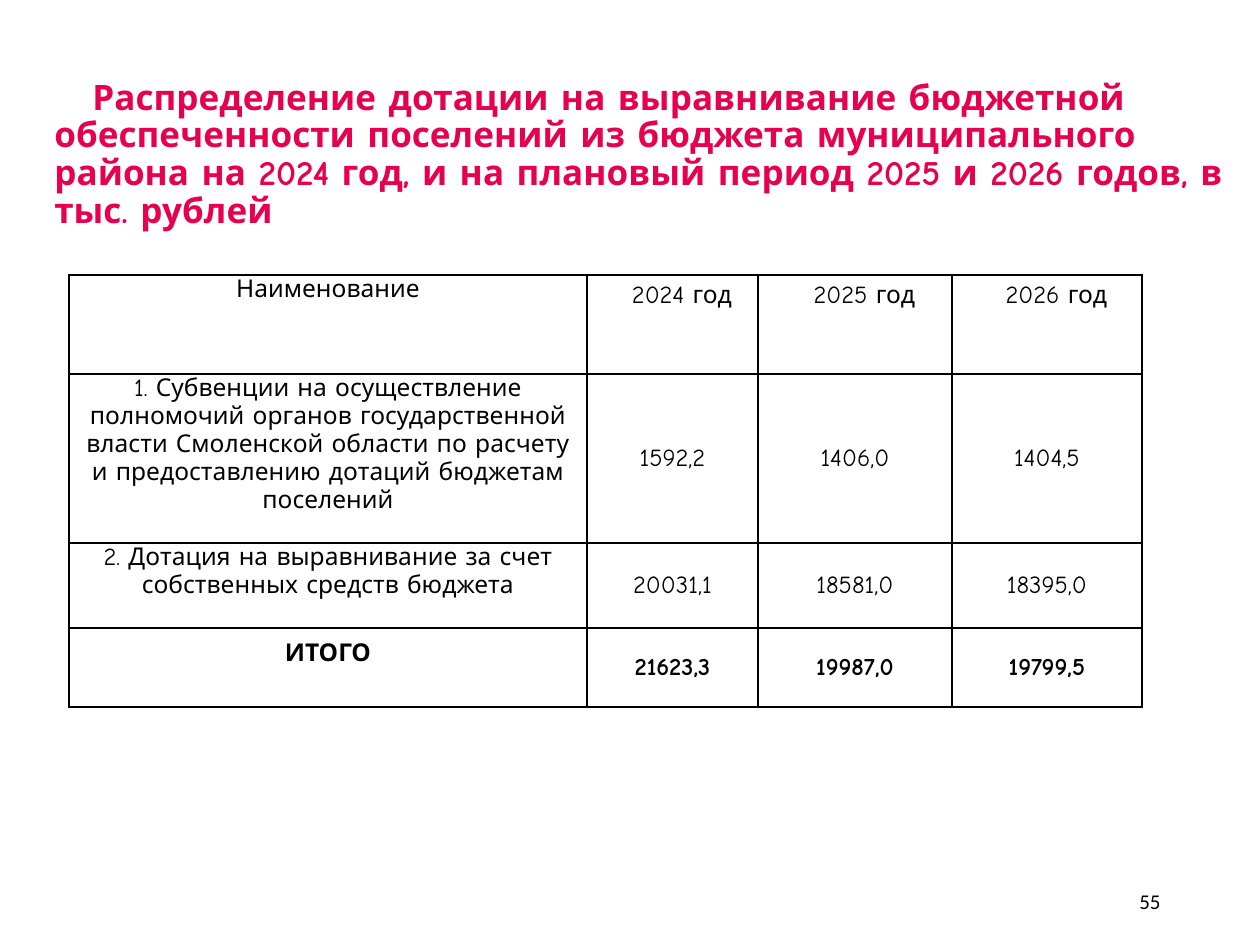
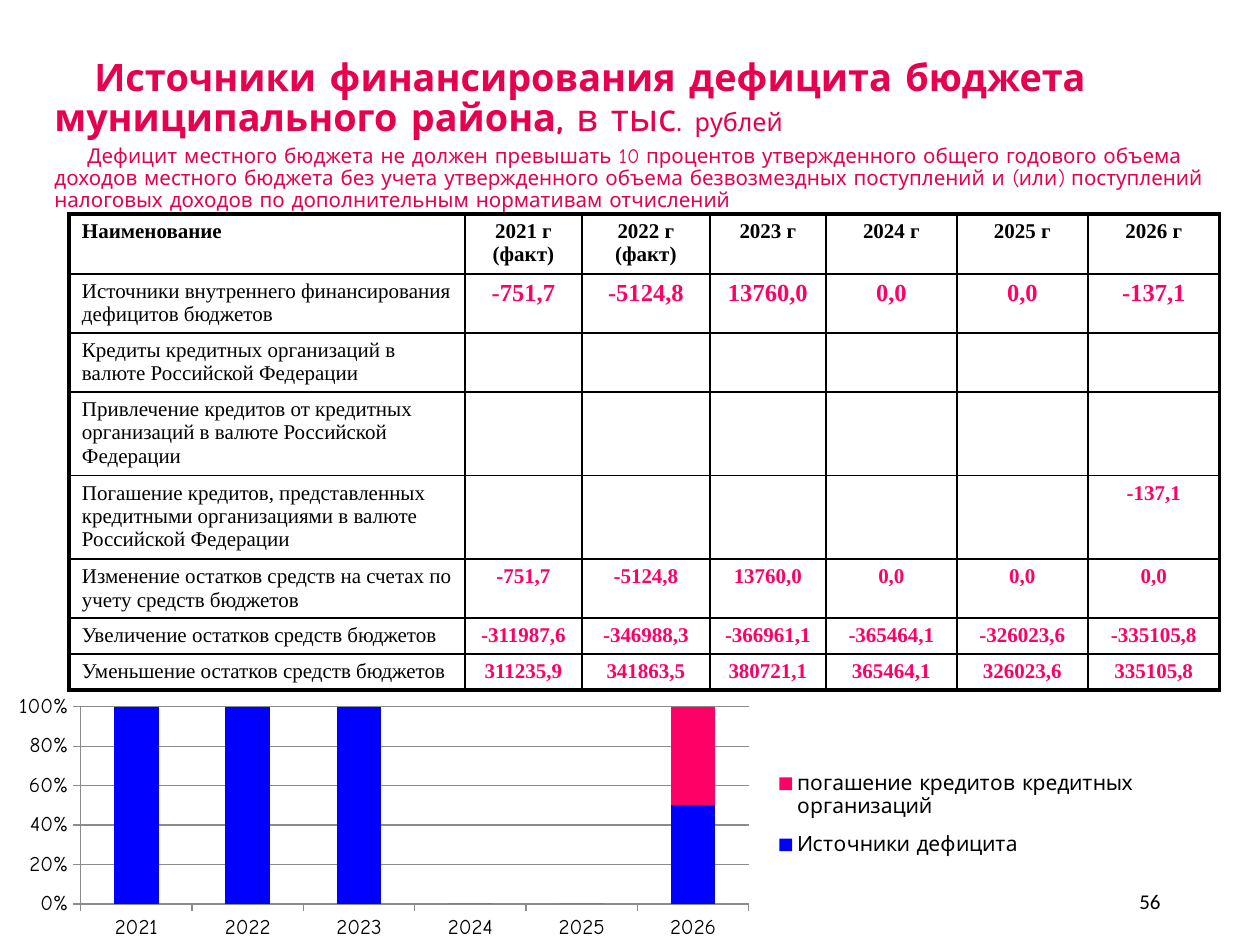
from lxml import etree
from pptx import Presentation
from pptx.chart.data import CategoryChartData
from pptx.dml.color import RGBColor
from pptx.enum.chart import XL_CHART_TYPE, XL_LEGEND_POSITION, XL_TICK_MARK
from pptx.enum.text import MSO_ANCHOR, PP_ALIGN
from pptx.oxml.ns import qn
from pptx.util import Emu, Pt


class Theme:
    title, accent, blue, ink, grid = "E6004D", "FF0066", "0000FF", "000000", "8B8B8B"
    comic, plain, serif = "Comic Neue", "Calibri", "Times New Roman"
    thin, thick = 1, 2.25


# Content: title paragraphs are (first-line indent, [(text, size, bold)])
GRANTS_TITLE = [(38, [(
    "Распределение дотации на выравнивание бюджетной обеспеченности поселений "
    "из бюджета муниципального района на 2024 год, и на плановый период "
    "2025 и 2026 годов, в тыс. рублей", 20, True)])]

GRANTS = [
    ("Наименование", "2024 год", "2025 год", "2026 год"),
    ("1. Субвенции на осуществление полномочий органов государственной власти "
     "Смоленской области по расчету и предоставлению дотаций бюджетам поселений",
     "1592,2", "1406,0", "1404,5"),
    ("2. Дотация на выравнивание за счет собственных средств бюджета",
     "20031,1", "18581,0", "18395,0"),
    ("ИТОГО", "21623,3", "19987,0", "19799,5"),
]
GRANT_COLS = [518, 171, 194, 190]
GRANT_ROWS = [99, 169, 85, 79]

DEFICIT_TITLE = [
    (40, [("Источники финансирования дефицита бюджета\vмуниципального района,", 21.6, True),
          (" в тыс. ", 21.6, False), ("рублей", 14.4, False)]),
    (33, [("Дефицит местного бюджета не должен превышать 10 процентов утвержденного "
           "общего годового объема доходов местного бюджета без учета утвержденного "
           "объема безвозмездных поступлений и (или) поступлений налоговых доходов "
           "по дополнительным нормативам отчислений", 11.7, False)]),
]

NO_VALUES = ("",) * 6
DEFICIT = [
    ("Наименование", "2021 г (факт)", "2022 г (факт)", "2023 г", "2024 г", "2025 г", "2026 г"),
    ("Источники внутреннего финансирования дефицитов бюджетов",
     "-751,7", "-5124,8", "13760,0", "0,0", "0,0", "-137,1"),
    ("Кредиты кредитных организаций в валюте Российской Федерации", *NO_VALUES),
    ("Привлечение кредитов от кредитных организаций в валюте Российской Федерации", *NO_VALUES),
    ("Погашение кредитов, представленных кредитными организациями в валюте "
     "Российской Федерации", *NO_VALUES[1:], "-137,1"),
    ("Изменение остатков средств на счетах по учету средств бюджетов",
     "-751,7", "-5124,8", "13760,0", "0,0", "0,0", "0,0"),
    ("Увеличение остатков средств бюджетов",
     "-311987,6", "-346988,3", "-366961,1", "-365464,1", "-326023,6", "-335105,8"),
    ("Уменьшение остатков средств бюджетов",
     "311235,9", "341863,5", "380721,1", "365464,1", "326023,6", "335105,8"),
]
DEFICIT_COLS = [396, 117, 128, 116, 131, 131, 132]
DEFICIT_ROWS = [60, 59, 59, 83, 83, 59, 36, 36]

YEARS = ["2021", "2022", "2023", "2024", "2025", "2026"]
SERIES = [
    ("Источники дефицита", [-100, -100, 100, 0, 0, -50], Theme.blue),
    ("погашение кредитов кредитных организаций", [None] * 5 + [-50], Theme.accent),
]


# Helpers
def px(n):
    return Emu(round(n * 914400 / 126))


def style_font(font, name, size, color=Theme.ink, bold=False):
    font.name, font.size, font.bold = name, Pt(size), bold
    font.color.rgb = RGBColor.from_string(color)


def add_run(p, text, *style):
    for i, line in enumerate(text.split("\v")):
        if i:
            p.add_line_break()
        r = p.add_run()
        r.text = line
        style_font(r.font, *style)


def add_box(s, *box):
    tf = s.shapes.add_textbox(*map(px, box)).text_frame
    tf.word_wrap = True
    tf.vertical_anchor = MSO_ANCHOR.MIDDLE
    return tf


def add_page(prs, number, title, top, height):
    s = prs.slides.add_slide(prs.slide_layouts[6])
    tf = add_box(s, 42, top, 1197, height)
    for i, (indent, runs) in enumerate(title):
        p = tf.add_paragraph() if i else tf.paragraphs[0]
        p._p.get_or_add_pPr().set("indent", str(px(indent)))
        p.line_spacing = 0.9
        if i:
            p.space_before = Pt(3)
        for text, size, bold in runs:
            add_run(p, text, Theme.comic, size, Theme.title, bold)
    p = add_box(s, 890, 876, 283, 50).paragraphs[0]
    p.alignment = PP_ALIGN.RIGHT
    add_run(p, str(number), Theme.plain, 12)
    return s


def set_borders(cell, widths):
    tc_pr = cell._tc.get_or_add_tcPr()
    for side, width in zip("LRTB", widths):
        ln = etree.SubElement(tc_pr, qn(f"a:ln{side}"), w=str(Pt(width)))
        fill = etree.SubElement(ln, qn("a:solidFill"))
        etree.SubElement(fill, qn("a:srgbClr"), val=Theme.ink)


def add_grid(s, left, top, cols, rows, data, style_cell, outer=Theme.thin):
    frame = s.shapes.add_table(len(rows), len(cols), px(left), px(top),
                               px(sum(cols)), px(sum(rows)))
    table = frame.table
    table.first_row = table.horz_banding = False
    for col, width in zip(table.columns, cols):
        col.width = px(width)
    for row, height in zip(table.rows, rows):
        row.height = px(height)
    for i, texts in enumerate(data):
        for j, text in enumerate(texts):
            cell = table.cell(i, j)
            edges = (j == 0, j == len(cols) - 1, i == 0, i == len(rows) - 1)
            set_borders(cell, [outer if edge else Theme.thin for edge in edges])
            cell.fill.background()
            style = style_cell(cell, i, j)
            if text:
                add_run(cell.text_frame.paragraphs[0], text, *style)


def set_margins(cell, left, top, right, bottom):
    cell.margin_left, cell.margin_top = px(left), px(top)
    cell.margin_right, cell.margin_bottom = px(right), px(bottom)


def style_grant(cell, i, j):
    total = i == len(GRANTS) - 1
    cell.text_frame.paragraphs[0].alignment = PP_ALIGN.CENTER
    if i == 0 and j:
        set_margins(cell, 32, 6, 13, 6)
    else:
        set_margins(cell, 9, 12 if total and not j else 0, 9, 0)
    cell.vertical_anchor = MSO_ANCHOR.MIDDLE if i and j else MSO_ANCHOR.TOP
    return Theme.comic, 14, Theme.ink, total


def style_deficit(cell, i, j):
    # A small bottom margin keeps the text within the fixed row heights
    set_margins(cell, 13, 6, 13, 2)
    if j:
        cell.text_frame.paragraphs[0].alignment = PP_ALIGN.CENTER
    value = i > 0 and j > 0
    return (Theme.serif, 14 if value and i == 1 else 12,
            Theme.accent if value else Theme.ink, i == 0 or j > 0)


def set_layout(parent, before, inner=False, **fractions):
    old = parent.find(qn("c:layout"))
    if old is not None:
        parent.remove(old)
    layout = etree.Element(qn("c:layout"))
    manual = etree.SubElement(layout, qn("c:manualLayout"))
    if inner:
        etree.SubElement(manual, qn("c:layoutTarget"), val="inner")
    for axis in "xy":
        etree.SubElement(manual, qn(f"c:{axis}Mode"), val="edge")
    for key, value in fractions.items():
        etree.SubElement(manual, qn(f"c:{key}"), val=str(value))
    parent.insert(before, layout)


def add_deficit_chart(s):
    data = CategoryChartData()
    data.categories = YEARS
    for name, values, _ in SERIES:
        data.add_series(name, values)
    chart = s.shapes.add_chart(XL_CHART_TYPE.COLUMN_STACKED_100, px(0), px(689),
                               px(1152), px(256), data).chart
    style_font(chart.font, Theme.comic, 12)
    chart.has_title = False
    plot = chart.plots[0]
    plot.gap_width, plot.overlap, plot.vary_by_categories = 150, 100, False
    for series, (_, _, color) in zip(plot.series, SERIES):
        series.invert_if_negative = False
        series.format.fill.solid()
        series.format.fill.fore_color.rgb = RGBColor.from_string(color)
    grid = RGBColor.from_string(Theme.grid)
    for axis in (chart.category_axis, chart.value_axis):
        axis.major_tick_mark = XL_TICK_MARK.OUTSIDE
        axis.format.line.color.rgb = grid
        style_font(axis.tick_labels.font, Theme.comic, 12)
    value_axis = chart.value_axis
    value_axis.major_gridlines.format.line.color.rgb = grid
    value_axis.tick_labels.number_format = "0%"
    value_axis.tick_labels.number_format_is_linked = False
    chart.has_legend = True
    legend = chart.legend
    legend.position = XL_LEGEND_POSITION.RIGHT
    legend.include_in_layout = False
    style_font(legend.font, Theme.comic, 12)
    plot_area = chart._chartSpace.chart.plotArea
    set_layout(plot_area, 0, inner=True, x=0.07, y=0.07, w=0.58, h=0.77)
    set_layout(legend._element, 1, x=0.67, y=0.27, w=0.32, h=0.44)


def main():
    prs = Presentation()
    prs.slide_width, prs.slide_height = px(1260), px(945)

    # Grants to settlements
    s = add_page(prs, 55, GRANTS_TITLE, 52, 207)
    add_grid(s, 69, 275, GRANT_COLS, GRANT_ROWS, GRANTS, style_grant)

    # Sources of deficit financing
    s = add_page(prs, 56, DEFICIT_TITLE, 63, 144)
    add_grid(s, 69, 214, DEFICIT_COLS, DEFICIT_ROWS, DEFICIT, style_deficit, Theme.thick)
    add_deficit_chart(s)

    prs.save("out.pptx")


if __name__ == "__main__":
    main()
